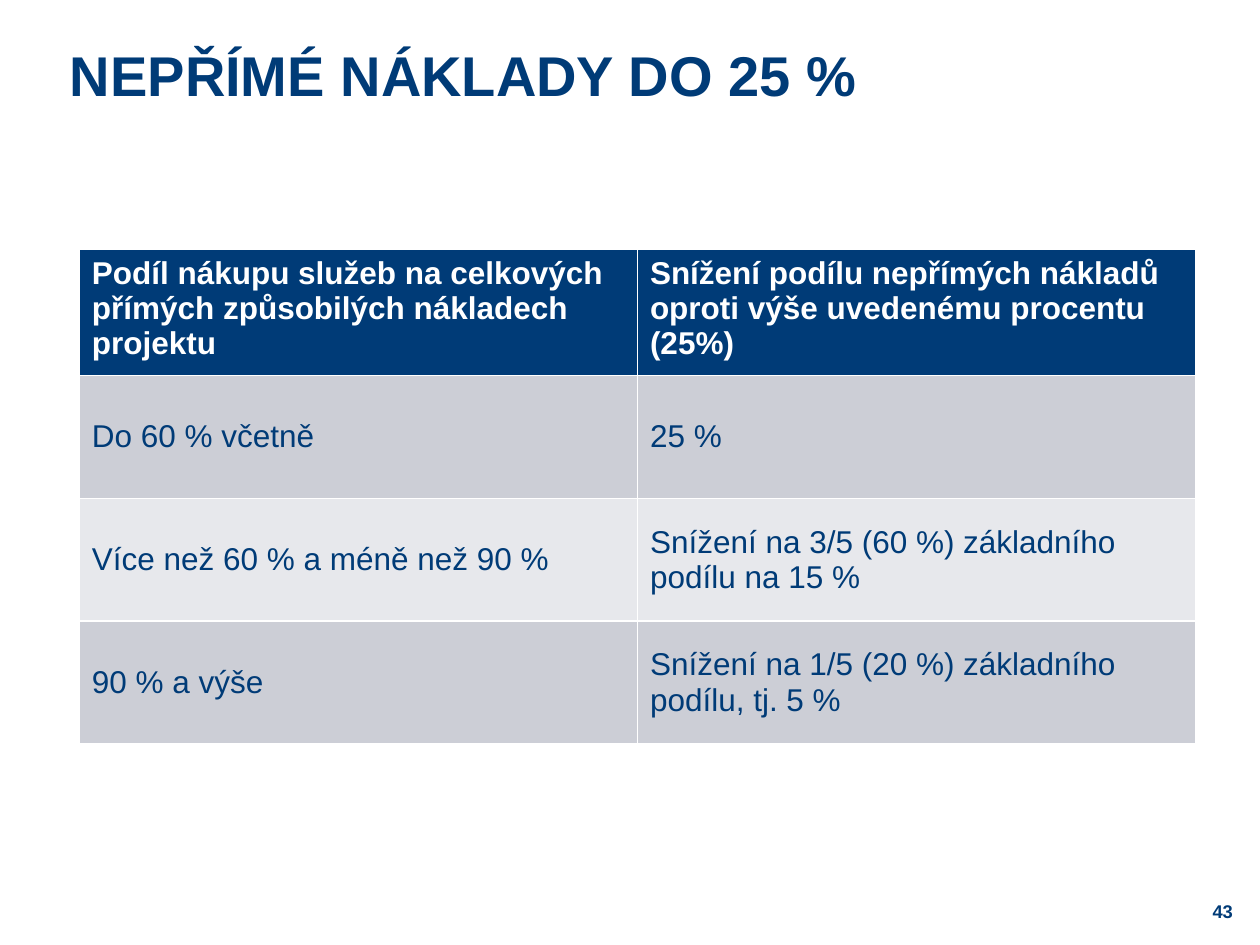
from pptx import Presentation
from pptx.dml.color import RGBColor
from pptx.enum import text
from pptx.util import Cm, Pt

NAVY = RGBColor(0x00, 0x3B, 0x77)
WHITE = RGBColor(0xFF, 0xFF, 0xFF)
GREY = RGBColor(0xCC, 0xCE, 0xD6)
PALE = RGBColor(0xE7, 0xE8, 0xEC)

ROWS = [
    ("Podíl nákupu služeb na celkových přímých způsobilých nákladech projektu",
     "Snížení podílu nepřímých nákladů oproti výše uvedenému procentu (25%)"),
    ("Do 60 % včetně", "25 %"),
    ("Více než 60 % a méně než 90 %",
     "Snížení na 3/5 (60 %) základního podílu na 15 %"),
    ("90 % a výše", "Snížení na 1/5 (20 %) základního podílu, tj. 5 %"),
]


def style(frame, size, color, bold):
    """Format every run of a text frame."""
    for par in frame.paragraphs:
        for run in par.runs:
            font = run.font
            font.name, font.size, font.bold = "Arial", Pt(size), bold
            font.color.rgb = color


def label(slide, box, words, size, align, inset=0):
    """Add a bold navy line of text, centred in height, in the box."""
    frame = slide.shapes.add_textbox(*map(Cm, box)).text_frame
    frame.word_wrap = True
    frame.margin_left = Cm(inset)
    frame.margin_right = frame.margin_top = frame.margin_bottom = 0
    frame.vertical_anchor = text.MSO_ANCHOR.MIDDLE
    frame.text = words
    frame.paragraphs[0].alignment = align
    style(frame, size, NAVY, True)


def rates(slide, box, rows):
    """Add the table of rates with a navy header and banded rows."""
    grid = slide.shapes.add_table(len(rows), len(rows[0]), *map(Cm, box)).table
    head = Cm(2.54)
    for i, row in enumerate(rows):
        top = i == 0
        grid.rows[i].height = head if top else (Cm(box[3]) - head) // (len(rows) - 1)
        for j, words in enumerate(row):
            cell = grid.cell(i, j)
            cell.text = words
            cell.fill.solid()
            cell.fill.fore_color.rgb = NAVY if top else GREY if i % 2 else PALE
            if not top:
                cell.vertical_anchor = text.MSO_ANCHOR.MIDDLE
            style(cell.text_frame, 18, WHITE if top else NAVY, top)


def main():
    """Build and save the slide."""
    deck = Presentation()
    deck.slide_width, deck.slide_height = Cm(25.4), Cm(19.05)
    slide = deck.slides.add_slide(deck.slide_layouts[6])
    label(slide, (1, 0, 23.4, 3), "NEPŘÍMÉ NÁKLADY DO 25 %", 32,
          text.PP_ALIGN.LEFT, 0.41)
    rates(slide, (1.6, 5.03, 22.5, 9.97), ROWS)
    label(slide, (24, 18.11, 1.3, 0.5), "43", 10.5, text.PP_ALIGN.CENTER)
    deck.save("out.pptx")


if __name__ == "__main__":
    main()
